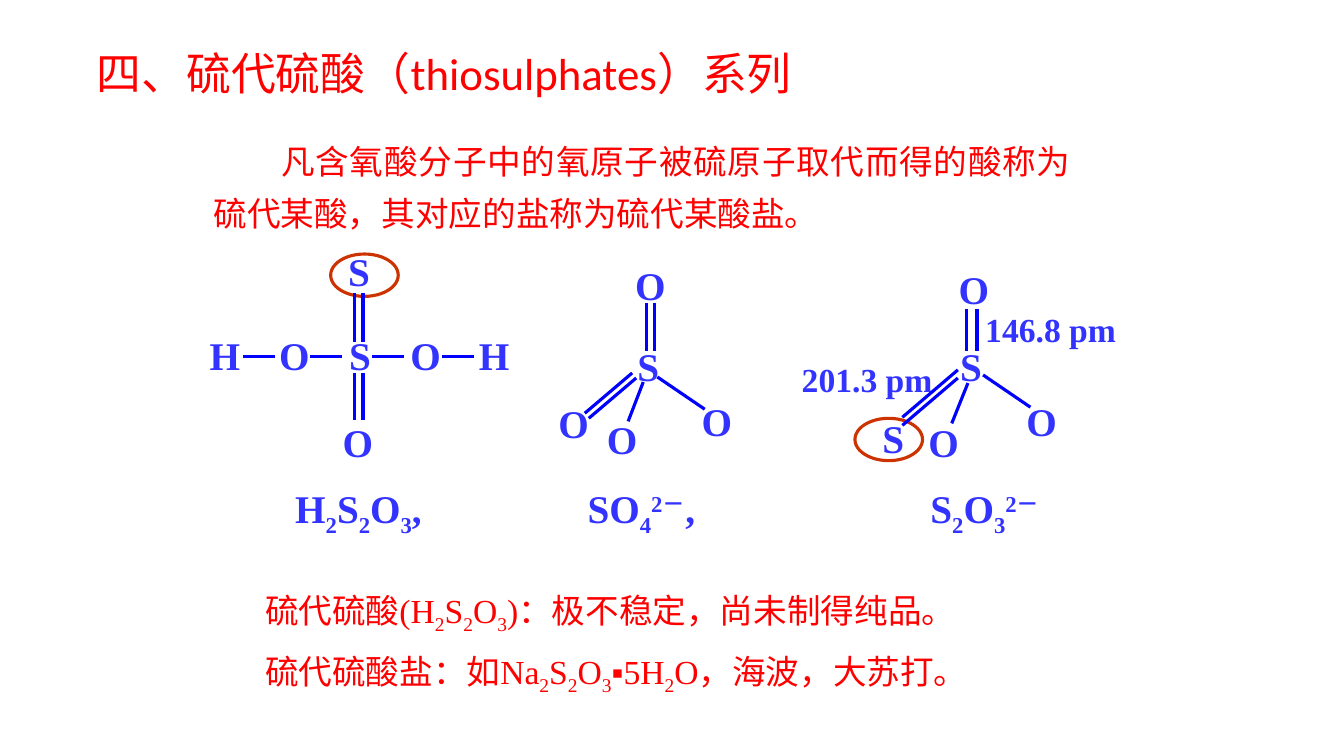
from typing import NamedTuple

from lxml import etree
from pptx import Presentation
from pptx.dml.color import RGBColor
from pptx.enum.shapes import MSO_CONNECTOR, MSO_SHAPE
from pptx.enum.text import MSO_ANCHOR, PP_ALIGN
from pptx.oxml.ns import qn
from pptx.util import Inches, Pt

RED = RGBColor(0xFF, 0x00, 0x00)
INK = RGBColor(0x33, 0x33, 0xFF)
BOND = RGBColor(0x00, 0x00, 0xFF)
RING = RGBColor(0xCC, 0x33, 0x00)
LEFT, CENTER, JUSTIFY = PP_ALIGN.LEFT, PP_ALIGN.CENTER, PP_ALIGN.JUSTIFY
TOP, MIDDLE = MSO_ANCHOR.TOP, MSO_ANCHOR.MIDDLE
STRAIGHT = MSO_CONNECTOR.STRAIGHT
OVAL = MSO_SHAPE.OVAL
SERIF, CJK = "Times New Roman", "Noto Sans CJK SC"
LINE_WIDTH = Pt(2.25)


class Label(NamedTuple):
    text: str
    x: float
    y: float
    width: float = 0.7
    size: int = 28


class Bond(NamedTuple):
    x1: float
    y1: float
    x2: float
    y2: float
    dx: float = 0
    dy: float = 0


class Ring(NamedTuple):
    x: float
    y: float


CHAIN_Y = 3.54
RINGS = [Ring(3.28, 2.52), Ring(8.48, 4.15)]
LABELS = [
    *(Label(atom, x, 3.52) for atom, x in zip("HOSOH", (2.23, 2.92, 3.57, 4.22, 4.9))),
    Label("S", 3.56, 2.69),
    Label("O", 3.55, 4.38),
    Label("S", 6.43, 3.63),
    Label("O", 6.45, 2.83),
    Label("O", 5.69, 4.2),
    Label("O", 6.17, 4.35),
    Label("O", 7.11, 4.18),
    Label("S", 9.63, 3.63),
    Label("O", 9.66, 2.87),
    Label("S", 8.86, 4.34),
    Label("O", 9.36, 4.38),
    Label("O", 10.33, 4.18),
    Label("201.3 pm", 8.6, 3.76, 1.54, 24),
    Label("146.8 pm", 10.42, 3.26, 1.65, 24),
]
BONDS = [
    *(Bond(x, CHAIN_Y, x + 0.32, CHAIN_Y) for x in (2.41, 3.07, 3.69, 4.38)),
    Bond(3.52, 2.91, 3.52, 3.39, dx=0.08),
    Bond(3.52, 3.7, 3.52, 4.17, dx=0.08),
    Bond(6.41, 3.01, 6.41, 3.48, dx=0.08),
    Bond(6.27, 3.7, 5.8, 4.1, dx=0.04, dy=0.05),
    Bond(6.38, 3.79, 6.23, 4.18),
    Bond(6.52, 3.74, 6.99, 4.06),
    Bond(9.59, 3.07, 9.59, 3.48, dx=0.1),
    Bond(8.95, 4.14, 9.5, 3.67, dy=0.08),
    Bond(9.6, 3.8, 9.44, 4.2),
    Bond(9.75, 3.72, 10.22, 4.04),
]


def add_run(p, text: str, baseline: int, size: float, font: str,
            color: RGBColor, bold: bool) -> None:
    r = p.add_run()
    r.text = text
    r.font.size = Pt(size)
    r.font.name = font
    r.font.bold = bold
    r.font.color.rgb = color
    rpr = r.font._element
    etree.SubElement(rpr, qn("a:ea")).set("typeface", CJK)
    if baseline:
        rpr.set("baseline", str(baseline))


def add_text(slide, text: str, x: float, y: float, w: float, h: float, *,
             size: float = 24, font: str = SERIF, color: RGBColor = RED,
             bold: bool = False, align=LEFT, anchor=TOP, spacing: float = 1,
             gap: float = 0, indent: float = 0, tabs: tuple = ()) -> None:
    """Underscores enclose subscripts and carets enclose superscripts."""
    sp = slide.shapes.add_textbox(Inches(x), Inches(y), Inches(w), Inches(h))
    tf = sp.text_frame
    tf.word_wrap = True
    tf.vertical_anchor = anchor
    for i, line in enumerate(text.split("\n")):
        p = tf.add_paragraph() if i else tf.paragraphs[0]
        p.alignment = align
        p.line_spacing = spacing
        if i:
            p.space_before = Pt(gap)
        ppr = p._p.get_or_add_pPr()
        if indent:
            ppr.set("marL", "0")
            ppr.set("indent", str(Inches(indent)))
        if tabs:
            tab_list = etree.SubElement(ppr, qn("a:tabLst"))
            for stop in tabs:
                tab = etree.SubElement(tab_list, qn("a:tab"))
                tab.set("pos", str(Inches(stop)))
                tab.set("algn", "l")
        for j, low in enumerate(line.split("_")):
            for k, part in enumerate(low.split("^")):
                if part:
                    baseline = -25000 if j % 2 else 30000 if k % 2 else 0
                    add_run(p, part, baseline, size, font, color, bold)


def add_label(slide, label: Label) -> None:
    height = 0.57 if label.size == 28 else 0.5
    add_text(slide, label.text, label.x - label.width / 2, label.y - height / 2,
             label.width, height, size=label.size, color=INK, bold=True,
             align=CENTER, anchor=MIDDLE)


def add_bond(slide, bond: Bond) -> None:
    offsets = [(0, 0)]
    if bond.dx or bond.dy:
        offsets.append((bond.dx, bond.dy))
    for dx, dy in offsets:
        cxn = slide.shapes.add_connector(
            STRAIGHT, Inches(bond.x1 + dx), Inches(bond.y1 + dy),
            Inches(bond.x2 + dx), Inches(bond.y2 + dy))
        cxn.line.color.rgb = BOND
        cxn.line.width = LINE_WIDTH
        etree.SubElement(cxn._element.spPr, qn("a:effectLst"))


def add_ring(slide, ring: Ring) -> None:
    sp = slide.shapes.add_shape(OVAL, Inches(ring.x), Inches(ring.y),
                                Inches(0.67), Inches(0.42))
    sp.shadow.inherit = False
    sp.fill.background()
    sp.line.color.rgb = RING
    sp.line.width = LINE_WIDTH


def main() -> None:
    prs = Presentation()
    prs.slide_width, prs.slide_height = Inches(13.33), Inches(7.5)
    slide = prs.slides.add_slide(prs.slide_layouts[6])

    add_text(slide, "四、硫代硫酸（thiosulphates）系列", 0.86, 0.4, 7.68, 0.64,
             size=32, font="Calibri")
    add_text(slide, "凡含氧酸分子中的氧原子被硫原子取代而得的酸称为硫代某酸，其对应的盐称为硫代某酸盐。",
             2.02, 1.23, 8.7, 1.08, font=CJK, align=JUSTIFY, spacing=1.3, indent=0.67)
    for ring in RINGS:
        add_ring(slide, ring)
    for label in LABELS:
        add_label(slide, label)
    for bond in BONDS:
        add_bond(slide, bond)
    add_text(slide, "H_2_S_2_O_3_,\tSO_4_^2－^,\tS_2_O_3_^2－^", 2.83, 4.76, 8.84, 0.57,
             size=28, color=INK, bold=True, tabs=(2.9, 6.3))
    add_text(slide, "硫代硫酸(H_2_S_2_O_3_)：极不稳定，尚未制得纯品。\n"
             "硫代硫酸盐：如Na_2_S_2_O_3_▪5H_2_O，海波，大苏打。",
             2.53, 5.8, 8.15, 1.11, gap=11)
    prs.save("out.pptx")


if __name__ == "__main__":
    main()
